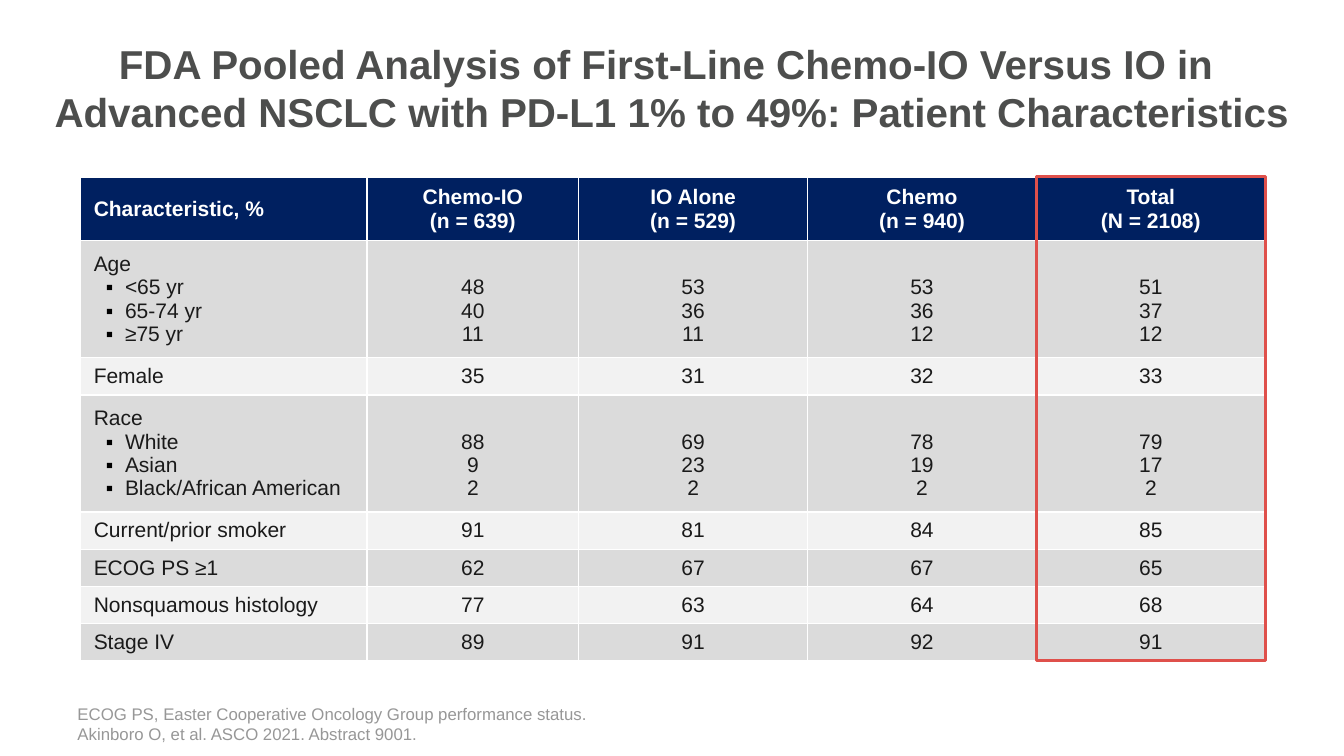
import pptx
import pptx.util
import pptx.dml.color
import pptx.enum.shapes
import pptx.enum.text
import pptx.oxml.ns
import lxml.etree

Inches = pptx.util.Inches
Pt = pptx.util.Pt
ALIGN = pptx.enum.text.PP_ALIGN
ANCHOR = pptx.enum.text.MSO_ANCHOR

TITLE = ("FDA Pooled Analysis of First-Line Chemo-IO Versus IO in \v"
         "Advanced NSCLC with PD-L1 1% to 49%: Patient Characteristics")
FOOTNOTE = ("ECOG PS, Easter Cooperative Oncology Group performance status.\n"
            "Akinboro O, et al. ASCO 2021. Abstract 9001.")
ROWS = [
    ["Characteristic, %", "Chemo-IO\v(n = 639)", "IO Alone\v(n = 529)",
     "Chemo\v(n = 940)", "Total\v(N = 2108)"],
    ["Age\n<65 yr\n65-74 yr\n≥75 yr", "48\n40\n11", "53\n36\n11", "53\n36\n12", "51\n37\n12"],
    ["Female", "35", "31", "32", "33"],
    ["Race\nWhite\nAsian\nBlack/African American",
     "88\n9\n2", "69\n23\n2", "78\n19\n2", "79\n17\n2"],
    ["Current/prior smoker", "91", "81", "84", "85"],
    ["ECOG PS ≥1", "62", "67", "67", "65"],
    ["Nonsquamous histology", "77", "63", "64", "68"],
    ["Stage IV", "89", "91", "92", "91"],
]
COL_WIDTHS = [2.84, 2.1, 2.27, 2.27, 2.27]
HEADER_HEIGHT, GROUP_HEIGHT, ROW_HEIGHT = 0.63, 1.16, 0.37
LINE_HEIGHT = 0.23


def rgb(value):
    """Return the colour for a hex string."""
    return pptx.dml.color.RGBColor.from_string(value)


def style_paragraph(p, size, color, bold=False, align=ALIGN.LEFT):
    """Format a paragraph and its runs."""
    p.alignment = align
    for r in p.runs:
        r.font.name = "Arial"
        r.font.size = Pt(size)
        r.font.bold = bold
        r.font.color.rgb = rgb(color)


def add_text(s, box, text, anchor, size, color, bold=False, align=ALIGN.LEFT):
    """Place a wrapped text box in the given box."""
    tf = s.shapes.add_textbox(*map(Inches, box)).text_frame
    tf.word_wrap = True
    tf.vertical_anchor = anchor
    tf.text = text
    for p in tf.paragraphs:
        style_paragraph(p, size, color, bold, align)


def add_child(parent, tag, **attributes):
    """Append a DrawingML element to its parent."""
    child = lxml.etree.SubElement(parent, pptx.oxml.ns.qn(tag))
    for name, value in attributes.items():
        child.set(name, value)
    return child


def add_bullet(p):
    """Give a paragraph a black square bullet with a hanging indent."""
    pPr = p._p.get_or_add_pPr()
    pPr.set("marL", str(Inches(0.31)))
    pPr.set("indent", str(Inches(-0.19)))
    add_child(add_child(pPr, "a:buClr"), "a:srgbClr", val="000000")
    add_child(pPr, "a:buFont", typeface="Arial")
    add_child(pPr, "a:buChar", char="▪")


def add_borders(cell):
    """Draw thin white lines on all sides of a cell."""
    tcPr = cell._tc.get_or_add_tcPr()
    for tag in ("a:lnL", "a:lnR", "a:lnT", "a:lnB"):
        line = add_child(tcPr, tag, w=str(Pt(1)))
        add_child(add_child(line, "a:solidFill"), "a:srgbClr", val="FFFFFF")


def fill_cell(cell, text, row, col):
    """Write and format one table cell."""
    header = row == 0
    add_borders(cell)
    cell.fill.solid()
    cell.fill.fore_color.rgb = rgb("002060" if header else "DBDBDB" if row % 2 else "F2F2F2")
    cell.vertical_anchor = ANCHOR.MIDDLE
    cell.margin_left = cell.margin_right = Inches(0.13)
    below_heading = col > 0 and "\n" in text
    cell.margin_top = Inches(0.05 + (LINE_HEIGHT if below_heading else 0))
    cell.margin_bottom = Inches(0.05)
    cell.text_frame.text = text
    for i, p in enumerate(cell.text_frame.paragraphs):
        if col == 0 and i > 0:
            add_bullet(p)
        style_paragraph(p, 15, "FFFFFF" if header else "1A1A1A", header,
                        ALIGN.CENTER if col else ALIGN.LEFT)


def add_characteristics(s, left, top):
    """Place the patient table and the frame around its last column."""
    heights = [HEADER_HEIGHT] + [GROUP_HEIGHT if "\n" in row[0] else ROW_HEIGHT
                                 for row in ROWS[1:]]
    width, height = sum(COL_WIDTHS), sum(heights)
    table = s.shapes.add_table(len(ROWS), len(COL_WIDTHS), Inches(left), Inches(top),
                               Inches(width), Inches(height)).table
    for column, w in zip(table.columns, COL_WIDTHS):
        column.width = Inches(w)
    for i, (row, h) in enumerate(zip(ROWS, heights)):
        table.rows[i].height = Inches(h)
        for j, text in enumerate(row):
            fill_cell(table.cell(i, j), text, i, j)

    total_width = COL_WIDTHS[-1]
    sp = s.shapes.add_shape(pptx.enum.shapes.MSO_SHAPE.RECTANGLE,
                            Inches(left + width - total_width), Inches(top - 0.01),
                            Inches(total_width), Inches(height))
    sp.shadow.inherit = False
    sp.fill.background()
    sp.line.color.rgb = rgb("DF504B")
    sp.line.width = Pt(2.25)


def main():
    """Build and save the slide."""
    prs = pptx.Presentation()
    prs.slide_width, prs.slide_height = Inches(13.33), Inches(7.5)
    s = prs.slides.add_slide(prs.slide_layouts[6])
    add_text(s, (0, 0.26, 13.33, 1.21), TITLE, ANCHOR.MIDDLE, 28.8, "4D4E4D", True, ALIGN.CENTER)
    add_characteristics(s, 0.8, 1.76)
    add_text(s, (0.67, 6.95, 11.75, 0.48), FOOTNOTE, ANCHOR.BOTTOM, 12, "979797")
    prs.save("out.pptx")


if __name__ == "__main__":
    main()
